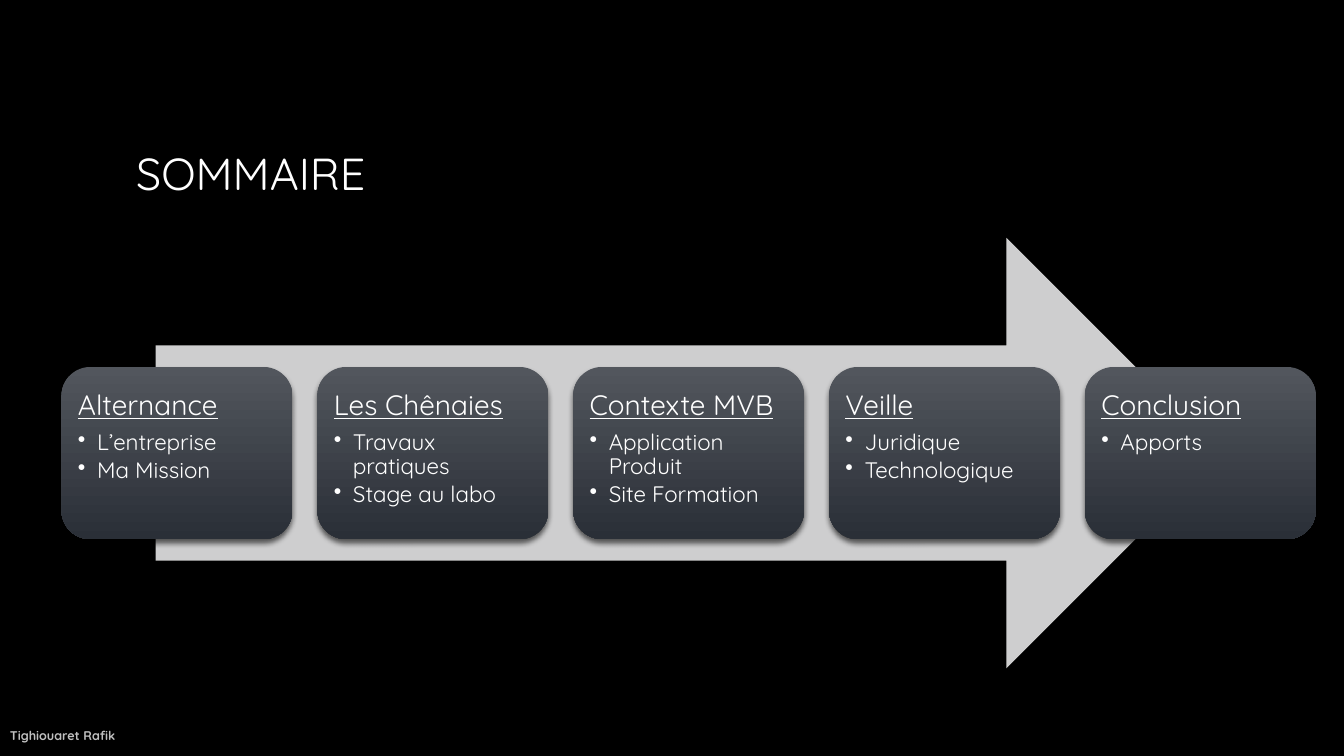
from lxml import etree
from pptx import Presentation
from pptx.dml.color import RGBColor
from pptx.enum.shapes import MSO_SHAPE
from pptx.enum.text import MSO_ANCHOR, MSO_AUTO_SIZE, PP_ALIGN
from pptx.oxml import parse_xml
from pptx.oxml.ns import qn
from pptx.util import Inches, Pt

ARROW = MSO_SHAPE.RIGHT_ARROW
ROUNDED = MSO_SHAPE.ROUNDED_RECTANGLE
LEFT = PP_ALIGN.LEFT
TOP = MSO_ANCHOR.TOP
MIDDLE = MSO_ANCHOR.MIDDLE
NO_AUTOFIT = MSO_AUTO_SIZE.NONE

TITLE_ONLY_LAYOUT = 5
FONT = "Quicksand"
BLACK = "000000"
WHITE = "FFFFFF"
ARROW_GREY = "CECECF"
FOOTER_GREY = "BFBFBF"
CARD_TOP = "52565D"
CARD_BOTTOM = "2A2F37"
DRAWING = "http://schemas.openxmlformats.org/drawingml/2006/main"
CARD_SHADOW = (
    f'<a:outerShdw xmlns:a="{DRAWING}" blurRad="{Pt(4)}" dist="{Pt(3)}" '
    f'dir="5400000" algn="ctr" rotWithShape="0"><a:srgbClr val="{BLACK}">'
    '<a:alpha val="60000"/></a:srgbClr></a:outerShdw>'
)

SECTIONS = [
    ("Alternance", ["L’entreprise", "Ma Mission"]),
    ("Les Chênaies", ["Travaux pratiques", "Stage au labo"]),
    ("Contexte MVB", ["Application Produit", "Site Formation"]),
    ("Veille", ["Juridique", "Technologique"]),
    ("Conclusion", ["Apports"]),
]


def color(value):
    """Turn a hex string into a colour."""
    return RGBColor.from_string(value)


def format_paragraph(paragraph, size, value=WHITE, bold=False, underline=False):
    """Align a paragraph left and format its runs."""
    paragraph.alignment = LEFT
    for run in paragraph.runs:
        run.font.name = FONT
        run.font.size = Pt(size)
        run.font.bold = bold
        run.font.underline = underline
        run.font.color.rgb = color(value)


def add_bullet(paragraph):
    """Give a paragraph a round bullet with a hanging indent."""
    properties = paragraph._p.get_or_add_pPr()
    properties.set("marL", str(Inches(0.19)))
    properties.set("indent", str(-Inches(0.19)))
    etree.SubElement(properties, qn("a:buChar")).set("char", "•")


def add_title(slide, left, top, width, height):
    """Place the title in its box."""
    title = slide.shapes.title
    title.left, title.top = Inches(left), Inches(top)
    title.width, title.height = Inches(width), Inches(height)
    frame = title.text_frame
    frame.text = "SOMMAIRE"
    frame.auto_size = NO_AUTOFIT
    frame.vertical_anchor = MIDDLE
    format_paragraph(frame.paragraphs[0], 32)


def add_box(slide, kind, left, top, width, height):
    """Add a preset shape without outline or shadow."""
    shape = slide.shapes.add_shape(
        kind, Inches(left), Inches(top), Inches(width), Inches(height)
    )
    shape.shadow.inherit = False
    shape.line.fill.background()
    return shape


def add_card(slide, heading, items, left, top, width, height):
    """Add a shaded card with an underlined heading and its bullets."""
    card = add_box(slide, ROUNDED, left, top, width, height)
    card.fill.gradient()
    card.fill.gradient_angle = 270
    for stop, value in zip(card.fill.gradient_stops, (CARD_TOP, CARD_BOTTOM)):
        stop.color.rgb = color(value)
    card._element.spPr.find(qn("a:effectLst")).append(parse_xml(CARD_SHADOW))

    frame = card.text_frame
    frame.word_wrap = True
    frame.vertical_anchor = TOP
    frame.margin_left = frame.margin_right = Inches(0.08)
    frame.margin_top = frame.margin_bottom = Inches(0.16)
    frame.text = "\n".join([heading, *items])
    for index, paragraph in enumerate(frame.paragraphs):
        is_heading = index == 0
        paragraph.line_spacing = 0.9
        paragraph.space_after = Pt(7 if is_heading else 2.4)
        format_paragraph(paragraph, 20 if is_heading else 16, underline=is_heading)
        if not is_heading:
            add_bullet(paragraph)


def add_process(slide, left, top, width, height):
    """Add the arrow and the evenly spaced cards across its middle."""
    arrow_margin = width * 0.075
    arrow = add_box(
        slide, ARROW, left + arrow_margin, top, width - 2 * arrow_margin, height
    )
    arrow.fill.solid()
    arrow.fill.fore_color.rgb = color(ARROW_GREY)

    card_width = 2.29
    card_height = height * 0.4
    card_top = top + (height - card_height) / 2
    pitch = (width - card_width) / (len(SECTIONS) - 1)
    for index, (heading, items) in enumerate(SECTIONS):
        add_card(
            slide, heading, items,
            left + index * pitch, card_top, card_width, card_height,
        )


def add_footer(slide, left, top, width, height):
    """Add the author's name."""
    footer = slide.shapes.add_textbox(
        Inches(left), Inches(top), Inches(width), Inches(height)
    )
    frame = footer.text_frame
    frame.word_wrap = True
    frame.vertical_anchor = MIDDLE
    frame.text = "Tighiouaret Rafik"
    format_paragraph(frame.paragraphs[0], 9, FOOTER_GREY, bold=True)


def main():
    """Build and save the presentation."""
    presentation = Presentation()
    presentation.slide_width = Inches(13.33)
    presentation.slide_height = Inches(7.5)
    slide = presentation.slides.add_slide(
        presentation.slide_layouts[TITLE_ONLY_LAYOUT]
    )
    slide.background.fill.solid()
    slide.background.fill.fore_color.rgb = color(BLACK)
    add_title(slide, 1.25, 0.67, 10.83, 2.08)
    add_process(slide, 0.61, 2.36, 12.44, 4.27)
    add_footer(slide, 0, 7.1, 8.25, 0.4)
    presentation.save("out.pptx")


if __name__ == "__main__":
    main()
